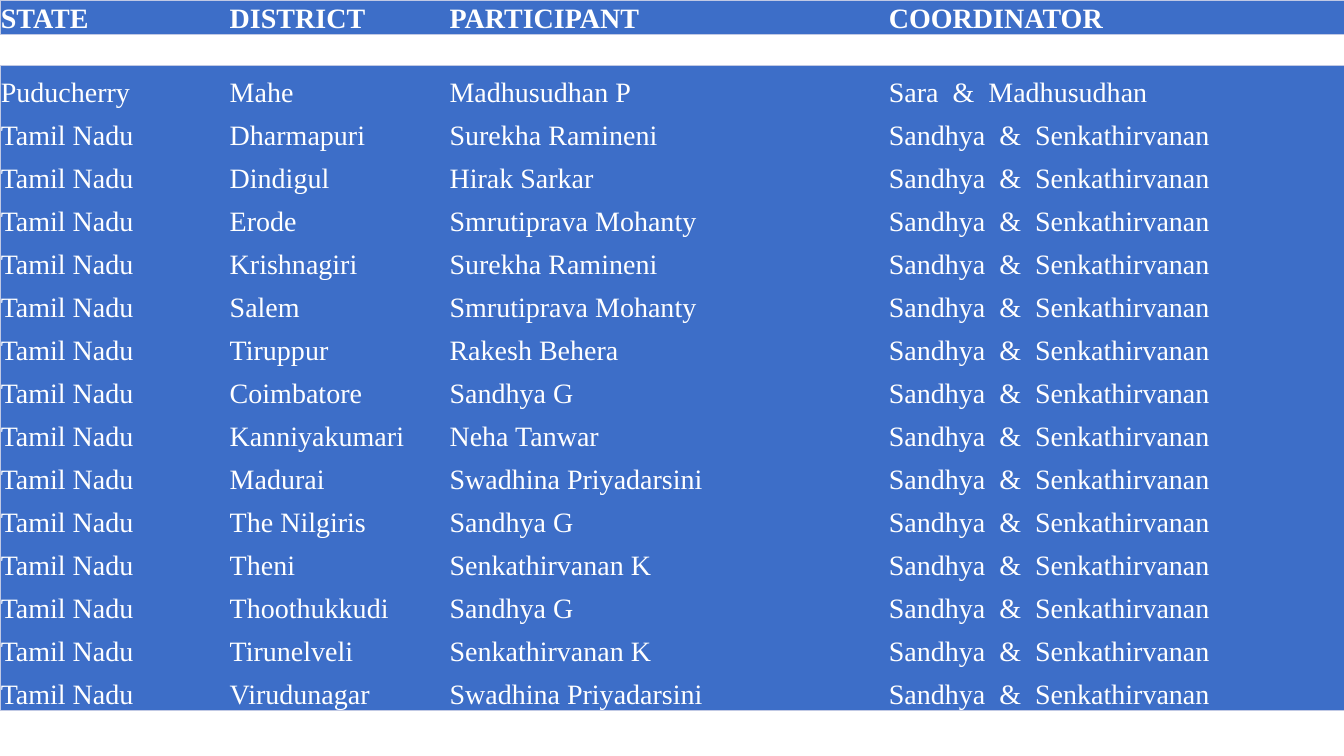
from lxml import etree
from pptx import Presentation
from pptx.dml import color
from pptx.enum import text
from pptx.oxml import ns
from pptx.util import Cm, Pt

FONT = "Times New Roman"
BLUE, WHITE, EDGE = "3D6EC8", "FFFFFF", "C1C9E4"
SLIDE_WIDTH, SLIDE_HEIGHT = 33.87, 19.05
COLUMN_WIDTHS = [5.77, 5.54, 11.07, 11.49]

HEADINGS = ["STATE", "DISTRICT", "PARTICIPANT", "COORDINATOR"]
TAMIL_NADU = [
    ("Dharmapuri", "Surekha Ramineni"),
    ("Dindigul", "Hirak Sarkar"),
    ("Erode", "Smrutiprava Mohanty"),
    ("Krishnagiri", "Surekha Ramineni"),
    ("Salem", "Smrutiprava Mohanty"),
    ("Tiruppur", "Rakesh Behera"),
    ("Coimbatore", "Sandhya G"),
    ("Kanniyakumari", "Neha Tanwar"),
    ("Madurai", "Swadhina Priyadarsini"),
    ("The Nilgiris", "Sandhya G"),
    ("Theni", "Senkathirvanan K"),
    ("Thoothukkudi", "Sandhya G"),
    ("Tirunelveli", "Senkathirvanan K"),
    ("Virudunagar", "Swadhina Priyadarsini"),
]
ASSIGNMENTS = [["Puducherry", "Mahe", "Madhusudhan P", "Sara  &  Madhusudhan"]] + [
    ["Tamil Nadu", district, participant, "Sandhya  &  Senkathirvanan"]
    for district, participant in TAMIL_NADU
]


def paint(fill, hex_color):
    fill.solid()
    fill.fore_color.rgb = color.RGBColor.from_string(hex_color)


def set_borders(cell, outer_sides):
    """Draw a thin line on the outer sides and none on the others."""
    properties = cell._tc.get_or_add_tcPr()
    for side in "LRTB":
        line = etree.SubElement(properties, ns.qn(f"a:ln{side}"), w=str(Pt(0.5)))
        if side in outer_sides:
            solid = etree.SubElement(line, ns.qn("a:solidFill"))
            etree.SubElement(solid, ns.qn("a:srgbClr"), val=EDGE)
        else:
            etree.SubElement(line, ns.qn("a:noFill"))


def fill_cell(cell, wording, bold):
    paint(cell.fill, BLUE)
    cell.margin_left = cell.margin_right = cell.margin_top = Cm(0.02)
    cell.margin_bottom = 0
    cell.vertical_anchor = text.MSO_ANCHOR.BOTTOM
    run = cell.text_frame.paragraphs[0].add_run()
    run.text = wording
    run.font.name, run.font.size, run.font.bold = FONT, Pt(20), bold
    paint(run.font.fill, WHITE)


def add_grid(slide, rows, top, height, bold=False):
    last_row, last_column = len(rows) - 1, len(COLUMN_WIDTHS) - 1
    grid = slide.shapes.add_table(len(rows), len(COLUMN_WIDTHS), 0, Cm(top),
                                  Cm(SLIDE_WIDTH), Cm(height)).table
    grid.first_row = bold
    grid.horz_banding = False
    for column, width in zip(grid.columns, COLUMN_WIDTHS):
        column.width = Cm(width)
    for r, row in enumerate(rows):
        for c, wording in enumerate(row):
            outer = {"L": c == 0, "R": c == last_column, "T": r == 0, "B": r == last_row}
            cell = grid.cell(r, c)
            set_borders(cell, [side for side in outer if outer[side]])
            fill_cell(cell, wording, bold)


def main():
    deck = Presentation()
    deck.slide_width, deck.slide_height = Cm(SLIDE_WIDTH), Cm(SLIDE_HEIGHT)
    slide = deck.slides.add_slide(deck.slide_layouts[6])
    paint(slide.background.fill, WHITE)

    # District assignments
    add_grid(slide, ASSIGNMENTS, top=1.64, height=16.26)
    # Heading strip
    add_grid(slide, [HEADINGS], top=0, height=0.87, bold=True)

    deck.save("out.pptx")


if __name__ == "__main__":
    main()
